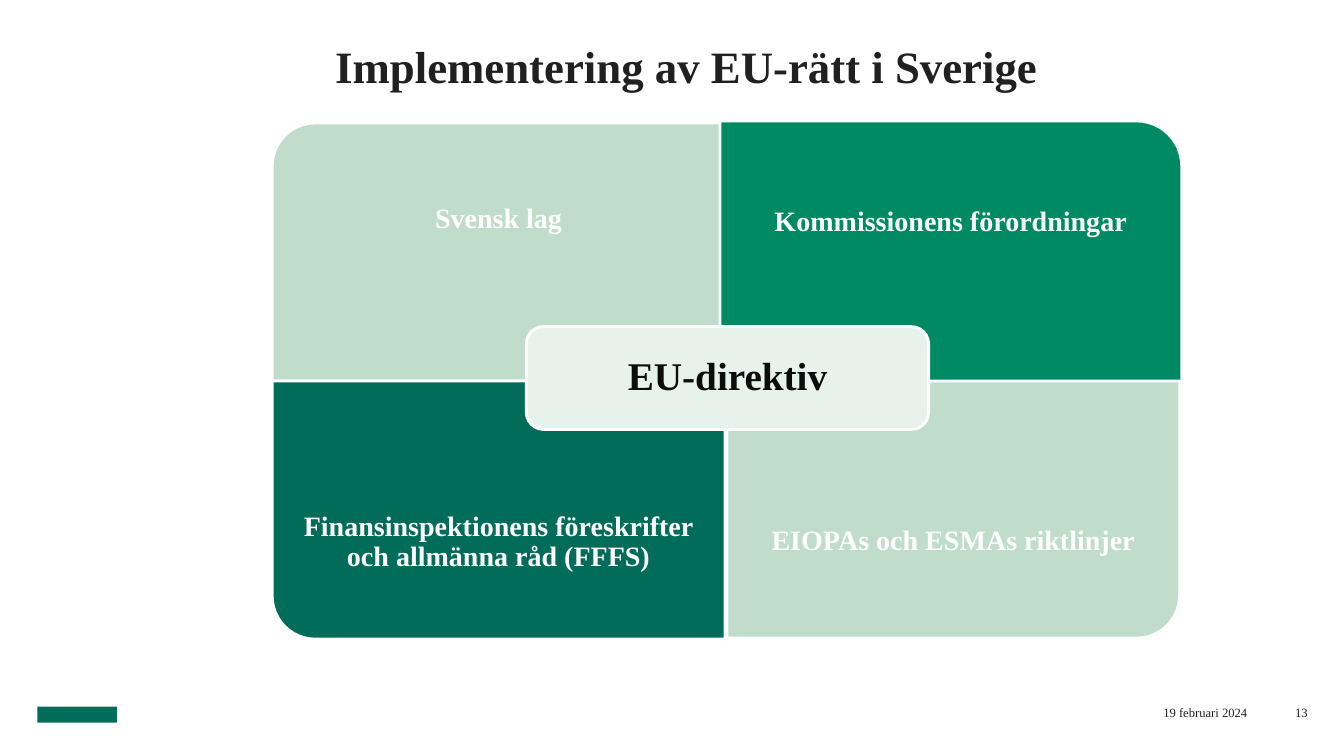
"""Build the slide on how EU law is implemented in Sweden."""
from pptx import Presentation
from pptx import util as u
from pptx.dml.color import RGBColor
from pptx.enum import shapes, text

FONT = "Times New Roman"
COLORS = {"white": "FFFFFF", "ink": "202020", "black": "0C0C0C", "pale": "E8F2EC",
          "light": "C0DDCC", "green": "008A64", "dark": "006C59"}
Kind = shapes.MSO_SHAPE
Align = text.PP_ALIGN
Anchor = text.MSO_ANCHOR

deck = Presentation()
deck.slide_width, deck.slide_height = u.Inches(13.33), u.Inches(7.5)
page = deck.slides.add_slide(deck.slide_layouts[6])


def add_block(kind, left, top, width, height, fill, line=None, turn=0):
    """Add a filled shape whose visible bounds hold after turning."""
    wide, high = (height, width) if turn % 180 else (width, height)
    shape = page.shapes.add_shape(
        kind, u.Inches(left + (width - wide) / 2), u.Inches(top + (height - high) / 2),
        u.Inches(wide), u.Inches(high))
    shape.rotation = turn
    shape.shadow.inherit = False
    shape.fill.solid()
    shape.fill.fore_color.rgb = RGBColor.from_string(COLORS[fill])
    if line:
        shape.line.color.rgb = RGBColor.from_string(COLORS[line])
        shape.line.width = u.Pt(2)
    else:
        shape.line.fill.background()


def add_label(words, left, top, width, height, size, color, bold=True,
              align=Align.CENTER, anchor=Anchor.MIDDLE, inset=0, spacing=1.0):
    """Add a wrapped text box with one paragraph."""
    box = page.shapes.add_textbox(*map(u.Inches, (left, top, width, height)))
    frame = box.text_frame
    frame.word_wrap = True
    frame.vertical_anchor = anchor
    frame.margin_left = frame.margin_right = u.Inches(inset)
    frame.margin_top = frame.margin_bottom = u.Inches(inset)
    para = frame.paragraphs[0]
    para.text = words
    para.alignment = align
    para.line_spacing = spacing
    para.font.name, para.font.size, para.font.bold = FONT, u.Pt(size), bold
    para.font.color.rgb = RGBColor.from_string(COLORS[color])


add_block(Kind.RECTANGLE, 0.37, 7.01, 0.79, 0.16, "dark")
for words, left, width in (("19 februari 2024", 10.72, 1.65), ("13", 12.73, 0.24)):
    add_label(words, left, 6.99, width, 0.18, 9, "ink", bold=False,
              align=Align.RIGHT, anchor=Anchor.TOP)
add_label("Implementering av EU-rätt i Sverige", 1.93, 0.14, 9.76, 0.78, 32, "ink",
          anchor=Anchor.BOTTOM)

quadrants = [
    ("Svensk lag", 2.7, 1.22, 4.49, 2.56, "light", 270),
    ("Kommissionens förordningar", 7.14, 1.2, 4.58, 2.68 - 0.1 + 0.1, "green", 0),
    ("Finansinspektionens föreskrifter och allmänna råd (FFFS)",
     2.7, 3.78, 4.49, 2.56, "dark", 180),
    ("EIOPAs och ESMAs riktlinjer", 7.21, 3.78, 4.49, 2.55, "light", 90),
]
for words, left, top, width, height, fill, turn in quadrants:
    add_block(Kind.ROUND_1_RECTANGLE, left, top, width, height, fill, "white", turn)
    label_height = height * 0.75
    label_top = top if top < 2 else top + height - label_height
    add_label(words, left, label_top, width, label_height, 20, "white",
              inset=0.16, spacing=0.9)

add_block(Kind.ROUNDED_RECTANGLE, 5.22, 3.24, 3.99, 1.02, "pale", "white")
add_label("EU-direktiv", 5.27, 3.29, 3.89, 0.92, 28, "black", inset=0.12, spacing=0.9)

deck.save("out.pptx")
